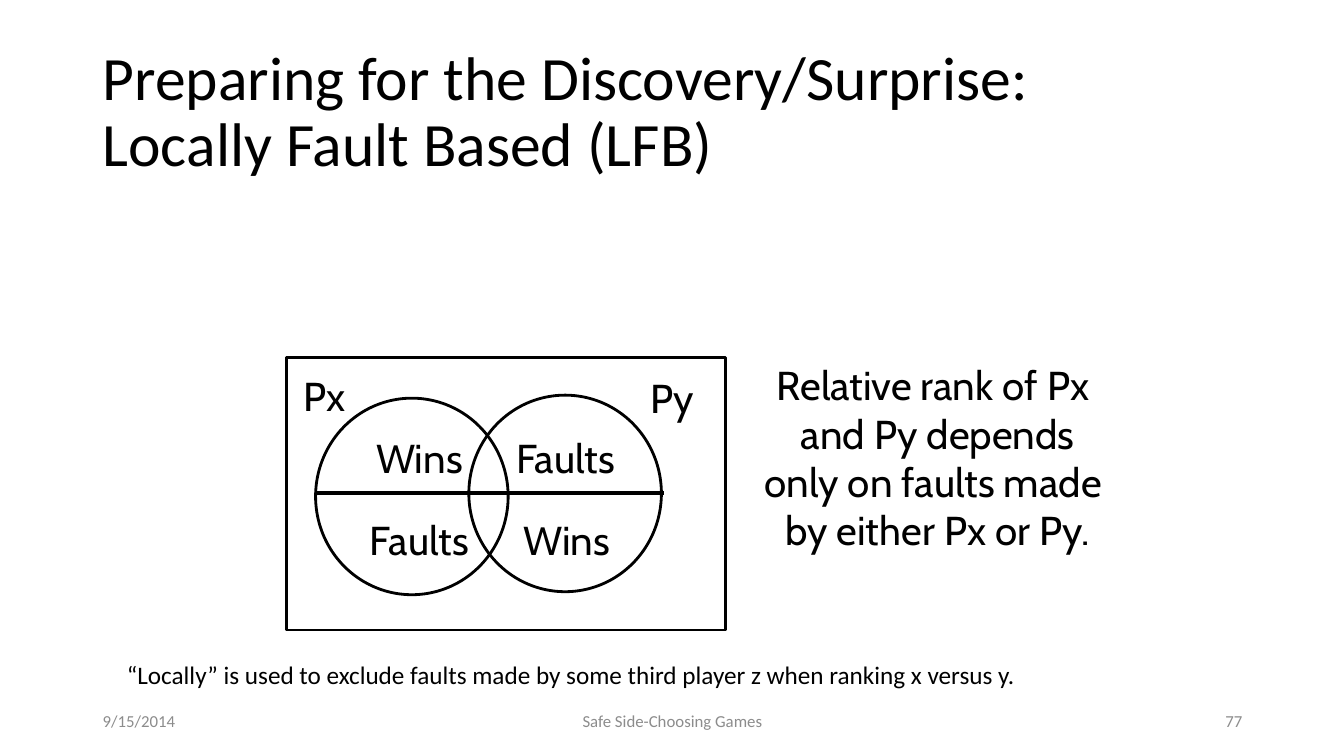
"""Build the Locally Fault Based slide with its two-player diagram."""
import pptx
import pptx.dml.color
import pptx.enum.shapes
import pptx.enum.text
import pptx.util
from pptx.oxml.ns import qn
from lxml import etree

Inches = pptx.util.Inches
Pt = pptx.util.Pt
Shape = pptx.enum.shapes.MSO_SHAPE
Align = pptx.enum.text.PP_ALIGN
Anchor = pptx.enum.text.MSO_ANCHOR

BLACK = pptx.dml.color.RGBColor(0x00, 0x00, 0x00)
GRAY = pptx.dml.color.RGBColor(0x8C, 0x8C, 0x8C)

TITLE = "Preparing for the Discovery/Surprise:\vLocally Fault Based (LFB)"
RANK_RULE = ["Relative rank of Px ", "and Py depends",
             "only on faults made ", "by either Px or Py."]
FOOTNOTE = ("“Locally” is used to exclude faults made by some third player z "
            "when ranking x versus y.")
FOOTERS = [
    ("9/15/2014", 0.92, 3, Align.LEFT),
    ("Safe Side-Choosing Games", 4.42, 4.5, Align.CENTER),
    ("77", 9.42, 3, Align.RIGHT),
]
UNIVERSE = (2.84, 3.55, 4.36, 2.7)
PLAYER_CIRCLES = [(3.13, 3.95, 1.91, 1.95), (4.65, 3.92, 1.91, 1.95)]
DIVIDER_Y = 4.89
DIVIDERS = [(3.13, 5.14), (4.67, 6.59)]
LABEL_HEIGHT = 0.48
LABELS = [
    ("Px", 2.98, 3.68, 0.47), ("Py", 6.43, 3.7, 0.47),
    ("Wins", 3.71, 4.3, 0.9), ("Faults", 5.06, 4.3, 1.1),
    ("Faults", 3.61, 5.11, 1.1), ("Wins", 5.17, 5.11, 0.9),
]


def add_text(slide, lines, box, size, font="Calibri", color=BLACK,
             align=Align.LEFT, anchor=Anchor.MIDDLE, wrap=True, inset=True):
    frame = slide.shapes.add_textbox(*map(Inches, box)).text_frame
    frame.word_wrap = wrap
    frame.vertical_anchor = anchor
    if not inset:
        frame.margin_left = frame.margin_right = 0
        frame.margin_top = frame.margin_bottom = 0
    frame.text = "\n".join(lines)
    for paragraph in frame.paragraphs:
        paragraph.alignment = align
        paragraph.font.size = Pt(size)
        paragraph.font.name = font
        paragraph.font.color.rgb = color
    return frame


def add_outline(slide, preset, box):
    outline = slide.shapes.add_shape(preset, *map(Inches, box))
    outline.shadow.inherit = False
    outline.fill.background()
    outline.line.color.rgb = BLACK
    outline.line.width = Pt(2)


def add_divider(slide, left, right):
    divider = slide.shapes.add_connector(
        pptx.enum.shapes.MSO_CONNECTOR.STRAIGHT,
        Inches(left), Inches(DIVIDER_Y), Inches(right), Inches(DIVIDER_Y))
    divider.line.color.rgb = BLACK
    divider.line.width = Pt(3)
    etree.SubElement(divider._element.spPr, qn("a:effectLst"))


def main():
    deck = pptx.Presentation()
    deck.slide_width, deck.slide_height = Inches(13.33), Inches(7.5)
    slide = deck.slides.add_slide(deck.slide_layouts[6])

    title = add_text(slide, [TITLE], (0.92, 0.4, 11.5, 1.45), 44)
    title.paragraphs[0].line_spacing = 0.9

    add_outline(slide, Shape.RECTANGLE, UNIVERSE)
    for circle in PLAYER_CIRCLES:
        add_outline(slide, Shape.OVAL, circle)
    for left, right in DIVIDERS:
        add_divider(slide, left, right)
    for label, left, top, width in LABELS:
        add_text(slide, [label], (left, top, width, LABEL_HEIGHT), 28.8, "Cabin",
                 align=Align.CENTER, wrap=False, inset=False)

    rank_rule = add_text(slide, RANK_RULE, (6.94, 3.61, 4.72, 2.33), 28.8, "Cabin",
                         align=Align.CENTER, inset=False)
    rank_rule.margin_bottom = Inches(LABEL_HEIGHT)

    add_text(slide, [FOOTNOTE], (1.16, 6.49, 9.13, 0.4), 18,
             anchor=Anchor.TOP, wrap=False)
    for footer, left, width, align in FOOTERS:
        add_text(slide, [footer], (left, 6.95, width, 0.4), 12,
                 color=GRAY, align=align)

    deck.save("out.pptx")


if __name__ == "__main__":
    main()
